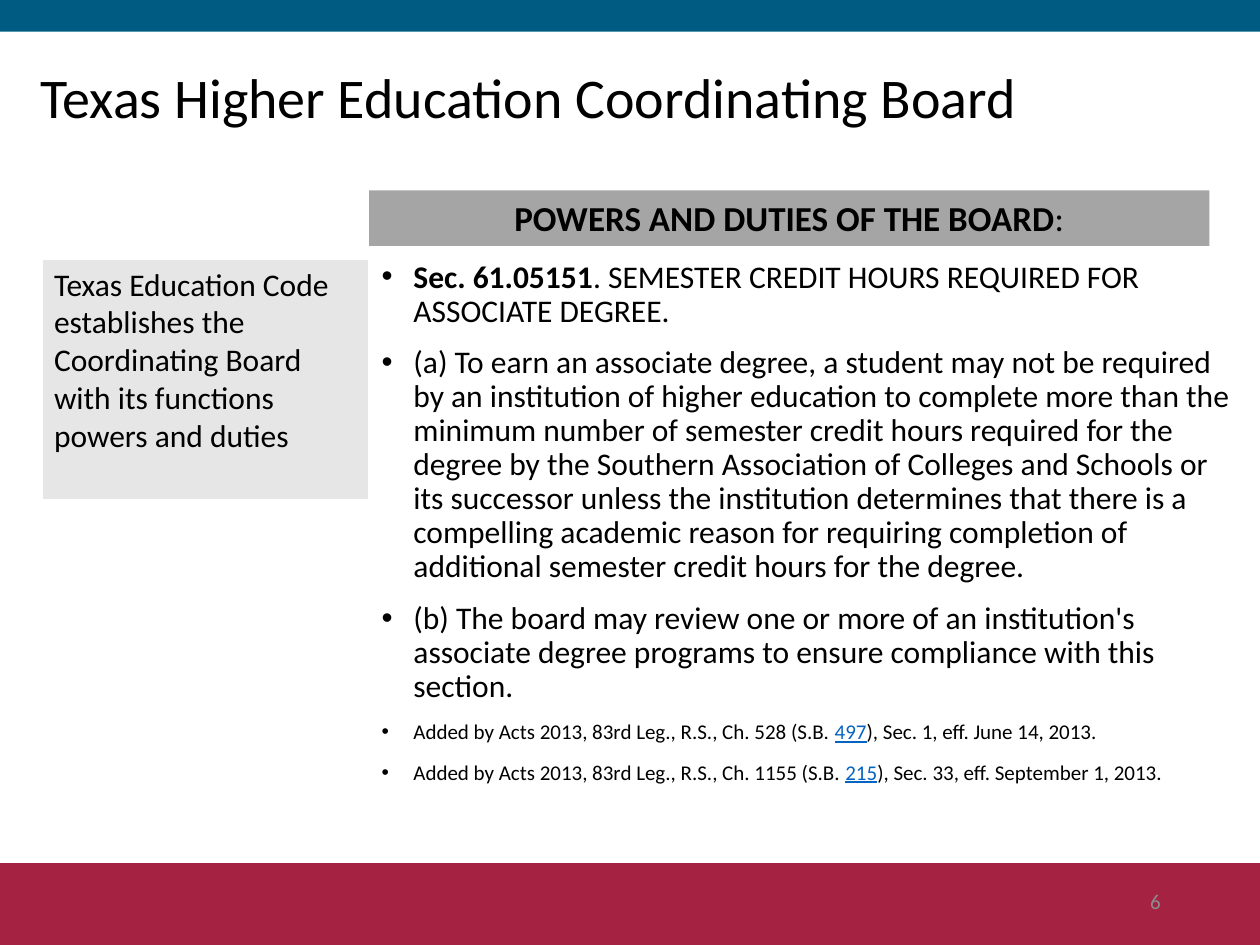
from lxml.etree import SubElement
from pptx import Presentation
from pptx.dml.color import RGBColor
from pptx.enum.shapes import MSO_SHAPE
from pptx.enum.text import MSO_ANCHOR, MSO_AUTO_SIZE, PP_ALIGN
from pptx.oxml.ns import qn
from pptx.util import Cm, Pt

COLORS = {
    "red": "A62242", "blue": "005B83", "light": "E7E6E6", "gray": "A5A5A5",
    "white": "FFFFFF", "black": "000000", "link": "0563C1", "number": "8C8C8C",
}
FONT = "Calibri"
WIDTH, HEIGHT = 25.4, 19.05

SECTIONS = [
    (18, [("Sec. 61.05151", {"bold": True}),
          (". SEMESTER CREDIT HOURS REQUIRED FOR ASSOCIATE DEGREE.", {})]),
    (18, [("(a) To earn an associate degree, a student may not be required by an "
           "institution of higher education to complete more than the minimum number "
           "of semester credit hours required for the degree by the Southern "
           "Association of Colleges and Schools or its successor unless the "
           "institution determines that there is a compelling academic reason for "
           "requiring completion of additional semester credit hours for the degree.", {})]),
    (18, [("(b) The board may review one or more of an institution's associate degree "
           "programs to ensure compliance with this section.", {})]),
]
LINK = {"color": "link", "underline": True}
SECTIONS += [
    (12, [(f"Added by Acts 2013, 83rd Leg., R.S., Ch. {chapter} (S.B. ", {}),
          (bill, LINK), (f"), Sec. {section}, eff. {date}, 2013.", {})])
    for chapter, bill, section, date in (("528", "497", "1", "June 14"),
                                         ("1155", "215", "33", "September 1"))
]


def rgb(name):
    return RGBColor.from_string(COLORS[name])


def add_text(p, text, size=18, color="black", bold=False, underline=False):
    r = p.add_run()
    r.text = text
    r.font.name = FONT
    r.font.size = Pt(size)
    r.font.bold = bold
    r.font.underline = underline
    r.font.color.rgb = rgb(color)


def place(sp, box):
    sp.left, sp.top, sp.width, sp.height = (Cm(v) for v in box)


def set_frame(tf, anchor):
    tf.word_wrap = True
    tf.auto_size = MSO_AUTO_SIZE.NONE
    tf.vertical_anchor = anchor
    return tf.paragraphs[0]


def add_rect(s, box, fill, line=None):
    sp = s.shapes.add_shape(MSO_SHAPE.RECTANGLE, *(Cm(v) for v in box))
    sp.shadow.inherit = False
    sp.fill.solid()
    sp.fill.fore_color.rgb = rgb(fill)
    if line:
        sp.line.color.rgb = rgb(line)
        sp.line.width = Pt(1.5)
    else:
        sp.line.fill.background()
    return sp


def add_bands(s, box):
    """Draw the coloured bands along the top and bottom of the box."""
    left, top, width, height = box
    add_rect(s, (left, top, width, 0.64), "blue")
    add_rect(s, (left, top + height - 1.65, width, 1.65), "red")


def add_title(s, box):
    sp = s.shapes.title
    place(sp, box)
    p = set_frame(sp.text_frame, MSO_ANCHOR.MIDDLE)
    p.alignment = PP_ALIGN.LEFT
    p.line_spacing = 0.9
    add_text(p, "Texas Higher Education Coordinating Board", size=32)


def add_side_note(s, box):
    sp = add_rect(s, box, "light", line="white")
    p = set_frame(sp.text_frame, MSO_ANCHOR.TOP)
    p.alignment = PP_ALIGN.LEFT
    add_text(p, "Texas Education Code establishes the Coordinating Board "
                "with its functions powers and duties")


def add_heading(s, box):
    sp = add_rect(s, box, "gray")
    p = set_frame(sp.text_frame, MSO_ANCHOR.TOP)
    p.alignment = PP_ALIGN.CENTER
    add_text(p, "POWERS AND DUTIES OF THE BOARD", size=20, bold=True)
    add_text(p, ":", size=20)


def set_bullet(p, indent):
    pPr = p._p.get_or_add_pPr()
    pPr.set("marL", str(indent))
    pPr.set("indent", str(-indent))
    SubElement(pPr, qn("a:buFont")).set("typeface", "Arial")
    SubElement(pPr, qn("a:buChar")).set("char", "•")


def add_sections(s, box):
    sp = s.placeholders[1]
    place(sp, box)
    tf = sp.text_frame
    first = set_frame(tf, MSO_ANCHOR.TOP)
    for i, (size, runs) in enumerate(SECTIONS):
        p = tf.add_paragraph() if i else first
        set_bullet(p, Cm(0.64))
        p.line_spacing = 0.9
        p.space_before = Pt(10 if i else 0)
        for text, fmt in runs:
            add_text(p, text, size=size, **fmt)


def add_page_number(s, box):
    sp = s.shapes.add_textbox(*(Cm(v) for v in box))
    p = set_frame(sp.text_frame, MSO_ANCHOR.MIDDLE)
    p.alignment = PP_ALIGN.RIGHT
    add_text(p, "6", size=12, color="number")


def main():
    prs = Presentation()
    prs.slide_width, prs.slide_height = Cm(WIDTH), Cm(HEIGHT)
    s = prs.slides.add_slide(prs.slide_layouts[1])
    add_bands(s, (0, 0, WIDTH, HEIGHT))
    add_title(s, (0.56, 1.07, 24.64, 1.9))
    add_side_note(s, (0.84, 5.21, 6.6, 4.88))
    add_sections(s, (7.44, 5.13, 17.75, 13.13))
    add_heading(s, (7.44, 3.84, 16.94, 1.12))
    add_page_number(s, (17.93, 17.65, 5.72, 1.02))
    prs.save("out.pptx")


if __name__ == "__main__":
    main()
